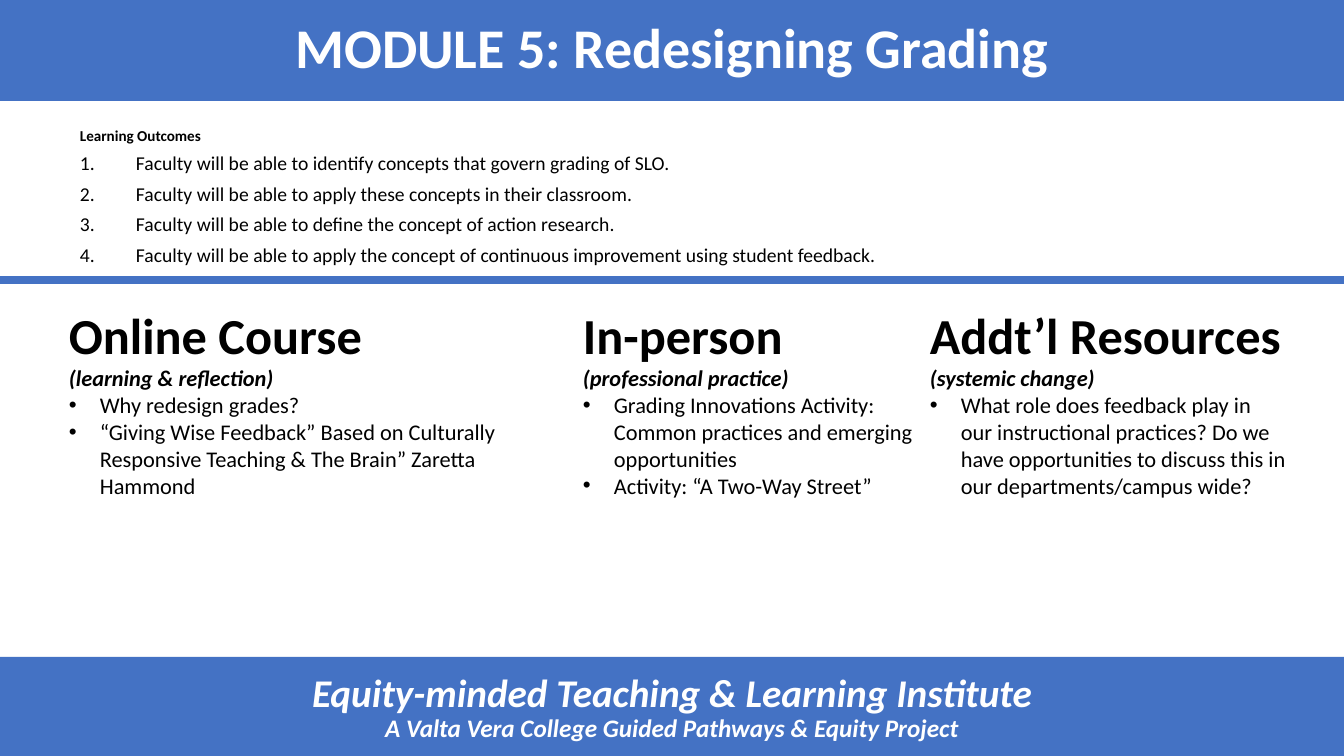
import pptx
import pptx.util
import pptx.dml.color
import pptx.enum.shapes
import pptx.enum.text
import pptx.oxml
import pptx.oxml.ns

SLIDE_WIDTH, SLIDE_HEIGHT = 1344, 756
EMU_PER_PX = 12192000 / SLIDE_WIDTH
COLORS = {"band": "4472C4", "on_band": "FFFFFF", "text": "000000"}
FONT = "Calibri"
BAND_HEIGHT = 102


def px(length):
    return pptx.util.Emu(round(length * EMU_PER_PX))


def rgb(name):
    return pptx.dml.color.RGBColor.from_string(COLORS[name])


class ModuleSlide:
    def __init__(self, presentation):
        self.slide = presentation.slides.add_slide(presentation.slide_layouts[6])
        self.shapes = self.slide.shapes

    def paragraph(self, frame, text, size, color="text", bold=False, italic=False):
        """Fill the frame's first paragraph if it is empty, else add one."""
        paragraph = frame.paragraphs[0]
        if paragraph.runs:
            paragraph = frame.add_paragraph()
        run = paragraph.add_run()
        run.text = text
        run.font.name = FONT
        run.font.size = pptx.util.Pt(size)
        run.font.bold = bold
        run.font.italic = italic
        run.font.color.rgb = rgb(color)
        return paragraph

    def list_marker(self, paragraph, indent, tag, **attributes):
        """Give the paragraph a hanging indent and a bullet or number."""
        properties = paragraph._p.get_or_add_pPr()
        properties.set("marL", str(px(indent)))
        properties.set("indent", str(-px(indent)))
        if tag == "a:buChar":
            marker_font = pptx.oxml.ns.qn("a:buFont")
            properties.append(properties.makeelement(marker_font, {"typeface": "Arial"}))
        properties.append(properties.makeelement(pptx.oxml.ns.qn(tag), attributes))

    def text_box(self, left, top, width, height):
        frame = self.shapes.add_textbox(px(left), px(top), px(width), px(height)).text_frame
        frame.word_wrap = True
        return frame

    def band(self, top, lines, italic=False):
        """Draw a full-width band with centred (text, size) lines."""
        band = self.shapes.add_shape(
            pptx.enum.shapes.MSO_SHAPE.RECTANGLE,
            0, px(top), px(SLIDE_WIDTH), px(BAND_HEIGHT))
        band.shadow.inherit = False
        band.fill.solid()
        band.fill.fore_color.rgb = rgb("band")
        band.line.fill.background()
        frame = band.text_frame
        frame.word_wrap = True
        frame.vertical_anchor = pptx.enum.text.MSO_ANCHOR.MIDDLE
        for text, size in lines:
            line = self.paragraph(frame, text, size, "on_band", True, italic)
            line.alignment = pptx.enum.text.PP_ALIGN.CENTER
            line.line_spacing = 0.9

    def outcomes(self, heading, items):
        frame = self.text_box(70, 126, 1181, 140)
        self.paragraph(frame, heading, 10.8, bold=True)
        for item in items:
            outcome = self.paragraph(frame, item, 14)
            self.list_marker(outcome, 56, "a:buAutoNum", type="arabicPeriod")
        for paragraph in frame.paragraphs:
            paragraph.line_spacing = 0.7
            paragraph.space_before = pptx.util.Pt(10)

    def divider(self, y):
        divider = self.shapes.add_connector(
            pptx.enum.shapes.MSO_CONNECTOR.STRAIGHT, 0, px(y), px(SLIDE_WIDTH), px(y))
        divider.line.color.rgb = rgb("band")
        divider.line.width = pptx.util.Pt(6)
        properties = divider._element.spPr
        properties.append(properties.makeelement(pptx.oxml.ns.qn("a:effectLst"), {}))

    def column(self, left, width, height, heading, focus, items):
        frame = self.text_box(left, 299, width, height)
        self.paragraph(frame, heading, 36, bold=True)
        self.paragraph(frame, focus, 16, bold=True, italic=True)
        for item in items:
            self.list_marker(self.paragraph(frame, item, 16), 31, "a:buChar", char="•")


OUTCOMES = [
    "Faculty will be able to identify concepts that govern grading of SLO.",
    "Faculty will be able to apply these concepts in their classroom.",
    "Faculty will be able to define the concept of action research.",
    "Faculty will be able to apply the concept of continuous improvement using student feedback.",
]
COLUMNS = [
    (59, 471, 268, "Online Course", "(learning & reflection)", [
        "Why redesign grades?",
        "“Giving Wise Feedback” Based on Culturally Responsive Teaching & The Brain” "
        "Zaretta Hammond"]),
    (573, 358, 238, "In-person", "(professional practice)", [
        "Grading Innovations Activity: Common practices and emerging opportunities",
        "Activity: “A Two-Way Street”"]),
    (920, 376, 326, "Addt’l Resources", "(systemic change)", [
        "What role does feedback play in our instructional practices? Do we have "
        "opportunities to discuss this in our departments/campus wide?"]),
]


def main():
    presentation = pptx.Presentation()
    presentation.slide_width = px(SLIDE_WIDTH)
    presentation.slide_height = px(SLIDE_HEIGHT)
    module = ModuleSlide(presentation)
    module.band(-1, [("MODULE 5: Redesigning Grading", 40)])
    module.outcomes("Learning Outcomes", OUTCOMES)
    for column in COLUMNS:
        module.column(*column)
    module.divider(280)
    module.band(657, [
        ("Equity-minded Teaching & Learning Institute", 28),
        ("A Alta Vera College Guided Pathways & Equity Project".replace("A Alta", "A Valta"), 18),
    ], italic=True)
    presentation.save("out.pptx")


if __name__ == "__main__":
    main()
